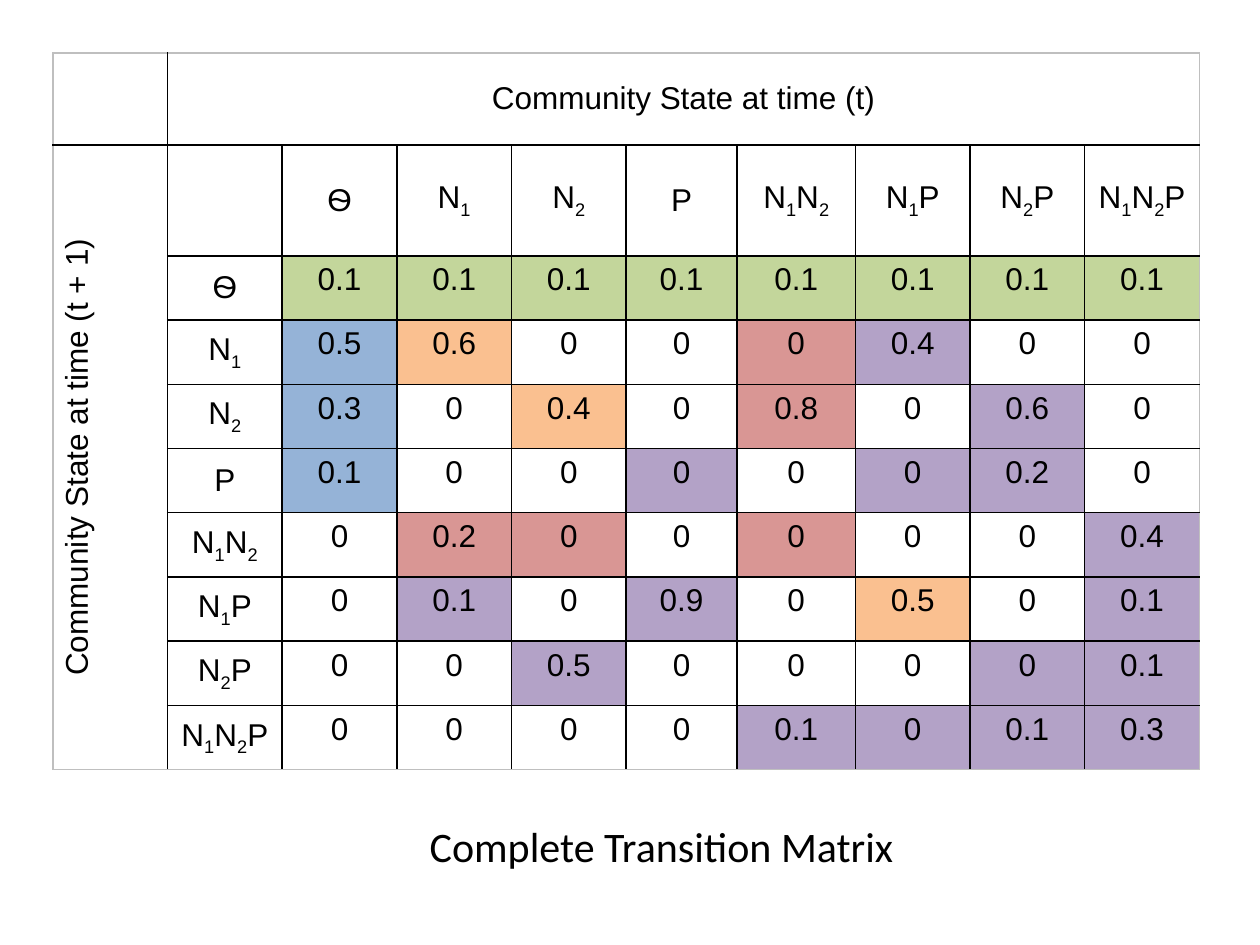
from lxml import etree
from pptx import Presentation
from pptx.dml.color import RGBColor
from pptx.enum.text import MSO_ANCHOR, MSO_AUTO_SIZE, PP_ALIGN
from pptx.oxml.ns import qn
from pptx.util import Inches, Pt

TOP, MIDDLE = MSO_ANCHOR.TOP, MSO_ANCHOR.MIDDLE
LEFT, CENTER = PP_ALIGN.LEFT, PP_ALIGN.CENTER
GROW = MSO_AUTO_SIZE.SHAPE_TO_FIT_TEXT

BLACK, GRAY = "000000", "BFBFBF"
FILLS = {"g": "C3D69B", "b": "95B3D7", "o": "FAC090",
         "r": "D99694", "p": "B3A2C7", "w": "FFFFFF"}

# Digits in a state name are subscripts
STATES = ["Ѳ", "N1", "N2", "P", "N1N2", "N1P", "N2P", "N1N2P"]

# Each entry is a probability and the letter of its fill
MATRIX = [row.split() for row in (
    "0.1g 0.1g 0.1g 0.1g 0.1g 0.1g 0.1g 0.1g",
    "0.5b 0.6o 0w 0w 0r 0.4p 0w 0w",
    "0.3b 0w 0.4o 0w 0.8r 0w 0.6p 0w",
    "0.1b 0w 0w 0p 0w 0p 0.2p 0w",
    "0w 0.2r 0r 0w 0r 0w 0w 0.4p",
    "0w 0.1p 0w 0.9p 0w 0.5o 0w 0.1p",
    "0w 0w 0.5p 0w 0w 0w 0p 0.1p",
    "0w 0w 0w 0w 0.1p 0p 0.1p 0.3p",
)]

WIDTHS = [0.91] * 5 + [0.88, 0.94] + [0.91] * 3
HEIGHTS = [0.73, 0.88] + [0.51] * 8


def color(text):
    return RGBColor.from_string(text)


class Page:
    body = {"name": "Arial", "size": Pt(18)}
    head = {"name": "Calibri", "size": Pt(24)}

    def __init__(self, deck):
        self.slide = deck.slides.add_slide(deck.slide_layouts[5])

    def style(self, font, form):
        for key, value in form.items():
            setattr(font, key, value)
        font.color.rgb = color(BLACK)

    def title(self, text, left, top, width, height):
        shape = self.slide.shapes.title
        place = {"left": left, "top": top, "width": width, "height": height}
        for key, value in place.items():
            setattr(shape, key, Inches(value))
        frame = shape.text_frame
        form = {"text": text, "word_wrap": False, "auto_size": GROW,
                "vertical_anchor": TOP}
        for key, value in form.items():
            setattr(frame, key, value)
        line = frame.paragraphs[0]
        line.alignment = LEFT
        self.style(line.runs[0].font, self.head)

    def table(self, left, top, widths, heights):
        frame = self.slide.shapes.add_table(
            len(heights), len(widths), Inches(left), Inches(top),
            Inches(sum(widths)), Inches(sum(heights)))
        grid = frame.table
        grid.first_row = grid.horz_banding = False
        for col, width in zip(grid.columns, widths):
            col.width = Inches(width)
        for row, height in zip(grid.rows, heights):
            row.height = Inches(height)
        return grid

    def label(self, cell, text, anchor=MIDDLE, fill=None):
        cell.vertical_anchor = anchor
        if fill:
            cell.fill.solid()
            cell.fill.fore_color.rgb = color(fill)
        line = cell.text_frame.paragraphs[0]
        line.alignment = CENTER
        line.text = text
        for run in line.runs:
            self.style(run.font, self.body)

    def state(self, cell, name):
        self.label(cell, "")
        line = cell.text_frame.paragraphs[0]
        for char in name:
            run = line.add_run()
            run.text = char
            self.style(run.font, self.body)
            if char.isdigit():
                run.font._element.set("baseline", "-25000")

    def border(self, cell, sides):
        props = cell._tc.get_or_add_tcPr()
        for spot, (side, shade) in enumerate(sides.items()):
            line = etree.Element(qn("a:ln" + side), w=str(Pt(1)))
            fill = etree.SubElement(line, qn("a:solidFill"))
            etree.SubElement(fill, qn("a:srgbClr"), val=shade)
            props.insert(spot, line)


def main():
    deck = Presentation()
    deck.slide_width, deck.slide_height = Inches(10), Inches(7.5)
    page = Page(deck)
    grid = page.table(0.42, 0.42, WIDTHS, HEIGHTS)
    last = len(WIDTHS) - 1

    # Plain cells, with gray outer edges and black inner lines
    for r in range(len(HEIGHTS)):
        for c in range(len(WIDTHS)):
            cell = grid.cell(r, c)
            page.label(cell, "")
            cell.fill.background()
            right = c == last or (r == 0 and c > 0)
            base = r == last or (c == 0 and r > 0)
            edges = {"L": c == 0, "R": right, "T": r == 0, "B": base}
            page.border(cell, {side: GRAY if outer else BLACK
                               for side, outer in edges.items()})

    # Merged axis headings
    across, down = grid.cell(0, 1), grid.cell(1, 0)
    across.merge(grid.cell(0, last))
    down.merge(grid.cell(last, 0))
    page.label(across, "Community State at time (t)")
    page.label(down, "Community State at time (t + 1)")
    down._tc.get_or_add_tcPr().set("vert", "vert270")

    # State names and transition values
    for i, (name, row) in enumerate(zip(STATES, MATRIX), start=2):
        page.state(grid.cell(1, i), name)
        page.state(grid.cell(i, 1), name)
        for j, item in enumerate(row, start=2):
            page.label(grid.cell(i, j), item[:-1], TOP, FILLS[item[-1]])

    page.title("Complete Transition Matrix", 3.31, 6.46, 4.05, 0.5)
    deck.save("out.pptx")


if __name__ == "__main__":
    main()
